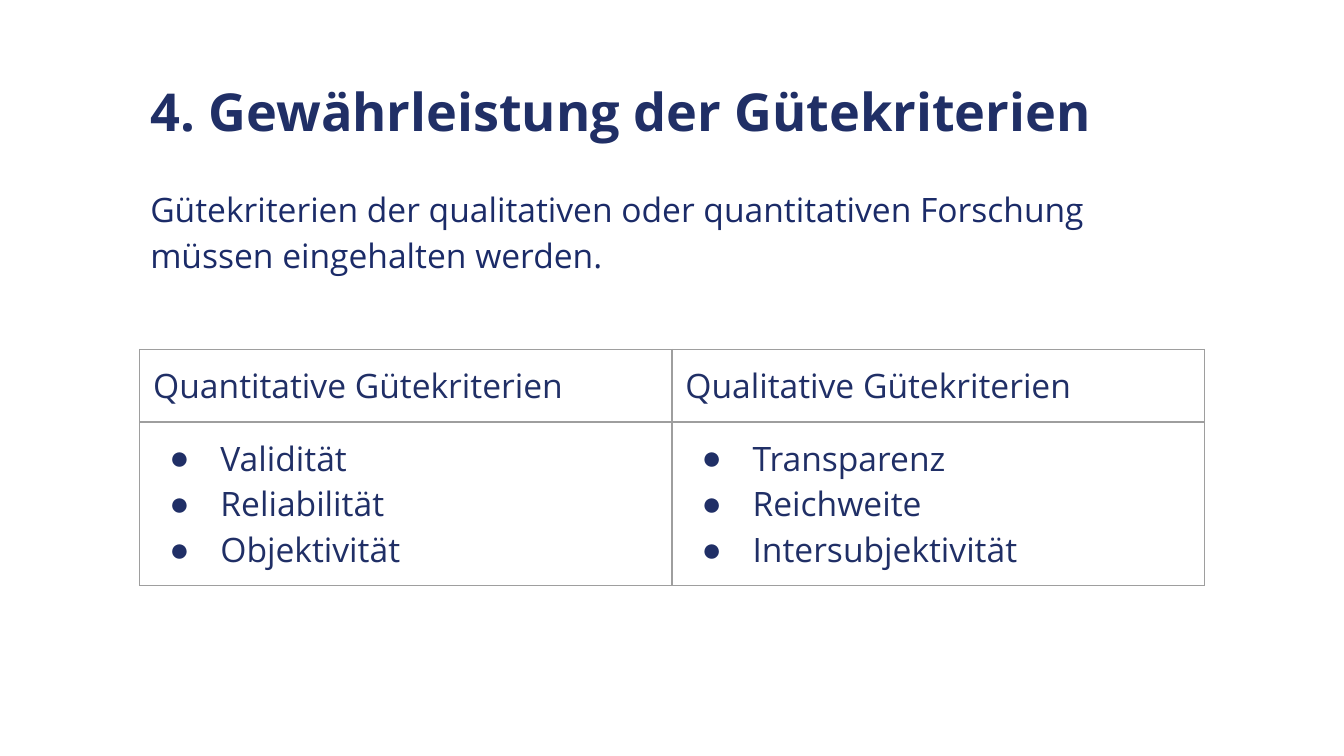
from lxml.etree import SubElement
from pptx import Presentation
from pptx.dml.color import RGBColor
from pptx.enum.text import MSO_ANCHOR as Anchor, PP_ALIGN as Align
from pptx.oxml.ns import qn
from pptx.util import Inches, Pt

# Content
TITLE = "4. Gewährleistung der Gütekriterien"
INTRO = ("Gütekriterien der qualitativen oder quantitativen Forschung "
         "müssen eingehalten werden.")
CRITERIA = {
    "Quantitative Gütekriterien": ["Validität", "Reliabilität", "Objektivität"],
    "Qualitative Gütekriterien": ["Transparenz", "Reichweite", "Intersubjektivität"],
}

# Format
COLORS = {"title": "202F66", "intro": "1B2B68", "border": "9E9E9E"}
FONT = "Open Sans"
BULLET_FONT = "Arial"
SLIDE_WIDTH = Inches(10)
COLUMN_WIDTH = 3.96
ROW_HEIGHTS = [0.54, 1.22]
MARGINS = {f"margin_{side}": Inches(0.1) for side in ("left", "right", "top", "bottom")}
FRAME = {**MARGINS, "word_wrap": True, "vertical_anchor": Anchor.TOP}


def apply(target, values):
    for name, value in values.items():
        setattr(target, name, value)


def write(paragraph, text, color, size=18, bold=False):
    paragraph.text = text
    paragraph.alignment = Align.LEFT
    apply(paragraph.font, {"name": FONT, "size": Pt(size), "bold": bold})
    paragraph.font.color.rgb = RGBColor.from_string(color)


def add_bullet(paragraph):
    props = paragraph._p.get_or_add_pPr()
    props.set("marL", str(Inches(0.5)))
    props.set("indent", str(Inches(-0.38)))
    color = SubElement(props, qn("a:buClr"))
    SubElement(color, qn("a:srgbClr"), val=COLORS["title"])
    SubElement(props, qn("a:buFont"), typeface=BULLET_FONT)
    SubElement(props, qn("a:buChar"), char="●")


def add_borders(cell):
    props = cell._tc.get_or_add_tcPr()
    for side in "LRTB":
        line = SubElement(props, qn(f"a:ln{side}"), w=str(Pt(0.75)))
        fill = SubElement(line, qn("a:solidFill"))
        SubElement(fill, qn("a:srgbClr"), val=COLORS["border"])


def fill_cell(cell, lines, bulleted):
    apply(cell, MARGINS)
    add_borders(cell)
    cell.fill.background()
    frame = cell.text_frame
    for number, line in enumerate(lines):
        paragraph = frame.add_paragraph() if number else frame.paragraphs[0]
        if bulleted:
            add_bullet(paragraph)
        write(paragraph, line, COLORS["title"])


# Slide in 16:9
prs = Presentation()
apply(prs, {"slide_width": SLIDE_WIDTH, "slide_height": SLIDE_WIDTH * 9 // 16})
slide = prs.slides.add_slide(prs.slide_layouts[5])

# Title
title = slide.shapes.title
apply(title, {"left": Inches(1.02), "top": Inches(0.49),
              "width": Inches(7.87), "height": Inches(0.63)})
apply(title.text_frame, FRAME)
write(title.text_frame.paragraphs[0], TITLE, COLORS["title"], 28, True)

# Introduction
intro = slide.shapes.add_textbox(Inches(1.02), Inches(1.26), Inches(7.87), Inches(3.74))
apply(intro.text_frame, FRAME)
write(intro.text_frame.paragraphs[0], INTRO, COLORS["intro"])
intro.text_frame.paragraphs[0].line_spacing = 1.15

# Table of criteria
table = slide.shapes.add_table(
    len(ROW_HEIGHTS), len(CRITERIA), Inches(1.04), Inches(2.6),
    Inches(COLUMN_WIDTH * len(CRITERIA)), Inches(sum(ROW_HEIGHTS))).table
apply(table, {"first_row": False, "horz_banding": False})
for row, height in zip(table.rows, ROW_HEIGHTS):
    row.height = Inches(height)
for column, (heading, criteria) in enumerate(CRITERIA.items()):
    table.columns[column].width = Inches(COLUMN_WIDTH)
    fill_cell(table.cell(0, column), [heading], bulleted=False)
    fill_cell(table.cell(1, column), criteria, bulleted=True)

prs.save("out.pptx")
